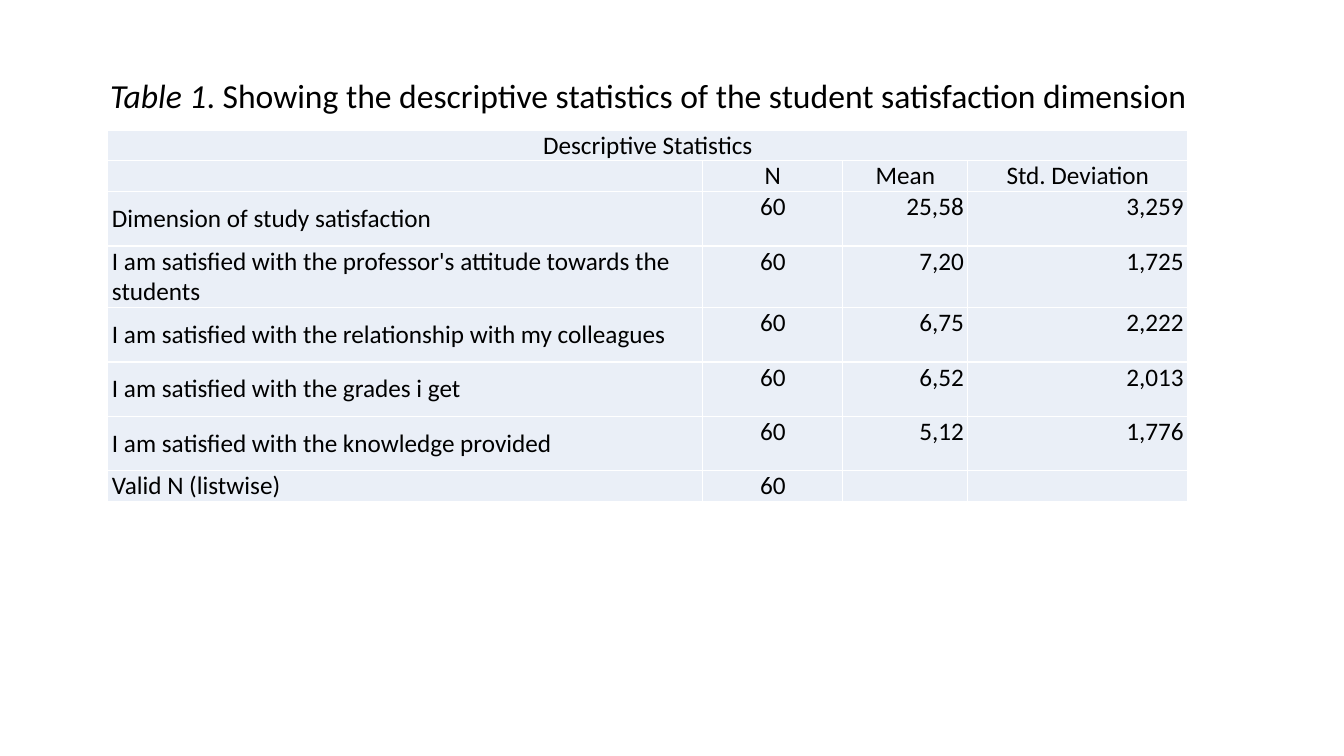
import pptx
import pptx.util
import pptx.dml.color
import pptx.enum.text
from lxml import etree

Inches, Pt = pptx.util.Inches, pptx.util.Pt
ALIGN = pptx.enum.text.PP_ALIGN
ANCHOR = pptx.enum.text.MSO_ANCHOR

BLACK = pptx.dml.color.RGBColor(0x00, 0x00, 0x00)
PALE_BLUE = pptx.dml.color.RGBColor(0xEA, 0xEF, 0xF7)
FONT = "Calibri"

CAPTION = [
    ("Table 1", True),
    (". Showing the descriptive statistics of the student satisfaction dimension", False),
]
ROWS = [
    ("Descriptive Statistics", "", "", ""),
    ("", "N", "Mean", "Std. Deviation"),
    ("Dimension of study satisfaction", "60", "25,58", "3,259"),
    ("I am satisfied with the professor's attitude towards the students", "60", "7,20", "1,725"),
    ("I am satisfied with the relationship with my colleagues", "60", "6,75", "2,222"),
    ("I am satisfied with the grades i get", "60", "6,52", "2,013"),
    ("I am satisfied with the knowledge provided", "60", "5,12", "1,776"),
    ("Valid N (listwise)", "60", "", ""),
]
HEADER_ROWS = 2
COL_WIDTHS = [5.9, 1.39, 1.24, 2.18]
COL_ALIGN = [ALIGN.LEFT, ALIGN.CENTER, ALIGN.RIGHT, ALIGN.RIGHT]
ROW_HEIGHTS = [0.27, 0.27] + [0.54] * 5 + [0.27]
CELL_INDENT = Inches(0.04)


def style_run(r, size):
    r.font.name = FONT
    r.font.size = Pt(size)
    r.font.color.rgb = BLACK


def add_caption(slide):
    body = slide.placeholders[1]
    body.left, body.top = Inches(0.68), Inches(0.74)
    body.width, body.height = Inches(11.5), Inches(4.76)
    p = body.text_frame.paragraphs[0]
    p.alignment = ALIGN.CENTER
    p.line_spacing = 0.9
    p.space_before = Pt(10)
    pPr = p._p.get_or_add_pPr()
    pPr.set("marL", "0")
    pPr.set("indent", "0")
    etree.SubElement(pPr, pptx.oxml.ns.qn("a:buNone"))
    for text, italic in CAPTION:
        r = p.add_run()
        r.text = text
        style_run(r, 24)
        r.font.italic = italic


def fill_cell(cell, text, align, anchor):
    cell.fill.solid()
    cell.fill.fore_color.rgb = PALE_BLUE
    cell.margin_left = cell.margin_right = cell.margin_top = cell.margin_bottom = 0
    cell.vertical_anchor = anchor
    if not text:
        return
    p = cell.text_frame.paragraphs[0]
    p.text = text
    p.alignment = align
    pPr = p._p.get_or_add_pPr()
    for side in ("marL", "marR"):
        pPr.set(side, str(CELL_INDENT))
    style_run(p.runs[0], 18)


def add_statistics(slide):
    frame = slide.shapes.add_table(
        len(ROWS), len(COL_WIDTHS), Inches(1.07), Inches(1.29),
        Inches(sum(COL_WIDTHS)), Inches(sum(ROW_HEIGHTS)))
    table = frame.table
    table.first_row = table.horz_banding = False
    for col, width in zip(table.columns, COL_WIDTHS):
        col.width = Inches(width)
    for row, height in zip(table.rows, ROW_HEIGHTS):
        row.height = Inches(height)
    table.cell(0, 0).merge(table.cell(0, len(COL_WIDTHS) - 1))
    for i, values in enumerate(ROWS):
        header = i < HEADER_ROWS
        for j, text in enumerate(values):
            align = ALIGN.CENTER if header else COL_ALIGN[j]
            anchor = ANCHOR.MIDDLE if j == 0 and not header else ANCHOR.TOP
            fill_cell(table.cell(i, j), text, align, anchor)


def main():
    prs = pptx.Presentation()
    prs.slide_width, prs.slide_height = Inches(13.33), Inches(7.5)
    slide = prs.slides.add_slide(prs.slide_layouts[1])
    title = slide.shapes.title.element
    title.getparent().remove(title)
    add_caption(slide)
    add_statistics(slide)
    prs.save("out.pptx")


if __name__ == "__main__":
    main()
